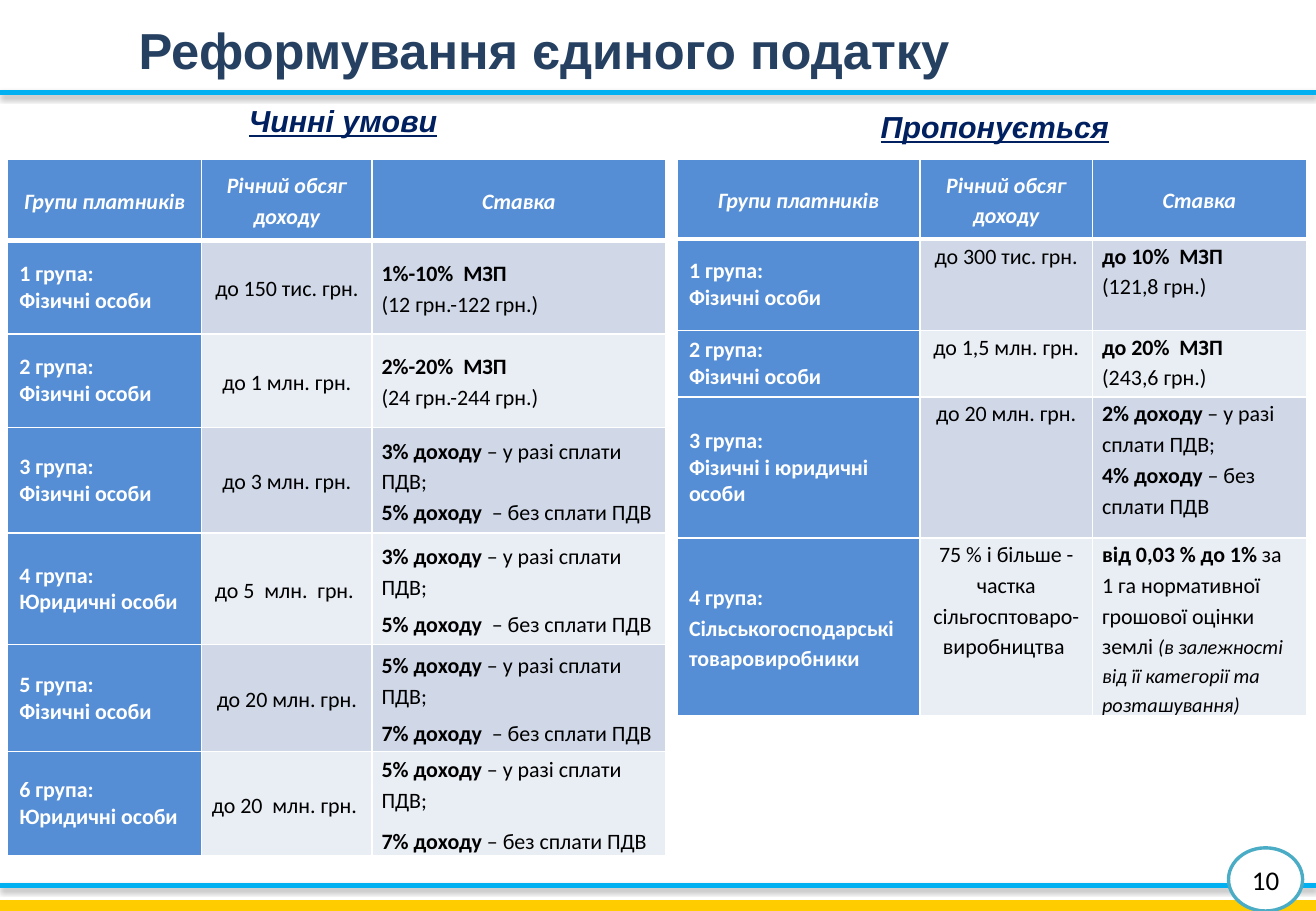
from lxml import etree
from pptx import Presentation
from pptx.dml.color import RGBColor
from pptx.enum.shapes import MSO_CONNECTOR, MSO_SHAPE
from pptx.enum.text import MSO_ANCHOR, PP_ALIGN
from pptx.util import Inches, Pt

LEFT, CENTER = PP_ALIGN.LEFT, PP_ALIGN.CENTER
TOP, MIDDLE = MSO_ANCHOR.TOP, MSO_ANCHOR.MIDDLE
STRAIGHT = MSO_CONNECTOR.STRAIGHT
RECTANGLE, OVAL = MSO_SHAPE.RECTANGLE, MSO_SHAPE.OVAL
NS = "http://schemas.openxmlformats.org/drawingml/2006/main"
COLORS = {
    "title": "254061", "heading": "002060", "rule": "00B0F0", "band": "FFCC00",
    "label": "558ED5", "odd": "D0D8E8", "even": "E9EDF4", "badge": "4BACC6",
    "white": "FFFFFF", "black": "000000",
}
WIDTH, HEIGHT = 10.83, 7.5


def rgb(name):
    return RGBColor.from_string(COLORS[name])


def style(para, size, color, bold=False, italic=False, face="Calibri", align=LEFT):
    para.alignment = align
    font = para.font
    font.name, font.size, font.bold, font.italic = face, Pt(size), bold, italic
    font.color.rgb = rgb(color)


deck = Presentation()
deck.slide_width, deck.slide_height = Inches(WIDTH), Inches(HEIGHT)
page = deck.slides.add_slide(deck.slide_layouts[5])
shapes = page.shapes

title = shapes.title
title.left, title.top, title.width, title.height = (
    Inches(v) for v in (1.04, 0.05, 9.73, 0.71))
title.text_frame.text = "Реформування єдиного податку"
title.text_frame.vertical_anchor = MIDDLE
style(title.text_frame.paragraphs[0], 30, "title", bold=True, face="Arial")

for y in (0.76, 7.29):
    rule = shapes.add_connector(STRAIGHT, 0, Inches(y), Inches(WIDTH), Inches(y))
    rule.line.color.rgb = rgb("rule")
    rule.line.width = Pt(3)
    rule._element.spPr.append(etree.fromstring(
        f'<a:effectLst xmlns:a="{NS}"><a:outerShdw blurRad="{Pt(3.1)}" dist="{Pt(1.8)}" '
        f'dir="5400000" rotWithShape="0"><a:srgbClr val="{COLORS["black"]}">'
        '<a:alpha val="35000"/></a:srgbClr></a:outerShdw></a:effectLst>'))

band = shapes.add_shape(RECTANGLE, 0, Inches(7.41), Inches(WIDTH), Inches(HEIGHT - 7.41))
band.shadow.inherit = False
band.fill.solid()
band.fill.fore_color.rgb = rgb("band")
band.line.fill.background()

HEADER = ("Групи платників", "Річний обсяг доходу", ["Ставка"])
current_rows = [
    HEADER,
    ("1 група: \vФізичні особи", "до 150 тис. грн.", ["1%-10%  МЗП", "|(12 грн.-122 грн.)"]),
    ("2 група: \vФізичні особи", "до 1 млн. грн.", ["2%-20%  МЗП", "|(24 грн.-244 грн.)"]),
    ("3 група: \vФізичні особи", "до 3 млн. грн.",
     ["3% доходу| – у разі сплати ПДВ;", "5% доходу|  – без сплати ПДВ"]),
    ("4 група: \vЮридичні особи", "до 5  млн.  грн. ",
     ["3% доходу |– у разі сплати ПДВ;", "5% доходу  |– без сплати ПДВ"]),
    ("5 група: \vФізичні особи", "до 20 млн. грн.",
     ["5% доходу |– у разі сплати ПДВ;", "7% доходу  |– без сплати ПДВ"]),
    ("6 група: \vЮридичні особи", "до 20  млн. грн. ",
     ["5% доходу |– у разі сплати ПДВ;", "7% доходу| – без сплати ПДВ"]),
]
proposed_rows = [
    HEADER,
    ("1 група: \vФізичні особи", "до 300 тис. грн.", ["до 10%  МЗП", "|(121,8 грн.)"]),
    ("2 група: \vФізичні особи", "до 1,5 млн. грн.", ["до 20%  МЗП", "|(243,6 грн.)"]),
    ("3 група: \vФізичні і юридичні особи", "до 20 млн. грн.",
     ["2% доходу |– у разі сплати ПДВ;", "4% доходу| – без сплати ПДВ"]),
    ("4 група: Сільськогосподарські товаровиробники",
     "75 % і більше - частка сільгосптоваро- виробництва ",
     ["від 0,03 % до 1% |за 1 га нормативної грошової оцінки землі "
      "|(в залежності від її категорії та розташування)"]),
]
panels = [
    ("Чинні умови", (1.95, 0.79, 1.76), 0.06, (1.6, 1.4, 2.42),
     (0.67, 0.77, 0.77, 0.87, 0.92, 0.88, 0.86), current_rows, MIDDLE,
     {4: (6, 1), 5: (6, 1), 6: (6, 1.15)}),
    ("Пропонується", (7.15, 0.84, 2.1), 5.57, (2, 1.42, 1.76),
     (0.66, 0.75, 0.55, 1.16, 1.46), proposed_rows, TOP, {}),
]

for name, (x, y, width), left, columns, heights, rows, anchor, spacing in panels:
    heading = shapes.add_textbox(Inches(x), Inches(y), Inches(width), Inches(0.4))
    heading.text_frame.word_wrap = False
    heading.text_frame.text = name
    para = heading.text_frame.paragraphs[0]
    style(para, 18, "heading", bold=True, italic=True, face="Arial")
    para.font.underline = True

    table = shapes.add_table(len(rows), len(columns), Inches(left), Inches(1.31),
                             Inches(sum(columns)), Inches(sum(heights))).table
    for column, width in zip(table.columns, columns):
        column.width = Inches(width)
    for r, (row, height) in enumerate(zip(rows, heights)):
        table.rows[r].height = Inches(height)
        for c, content in enumerate(row):
            cell = table.cell(r, c)
            label = r > 0 and c == 0
            body = r > 0 and c > 0
            cell.vertical_anchor = anchor if body else MIDDLE
            cell.margin_left = cell.margin_right = Inches(0.1 if label else 0.08)
            cell.margin_top = cell.margin_bottom = Inches(0.05 if label else 0)
            for side in "LRTB":
                thick = (r, side) in ((0, "B"), (1, "T"))
                cell._tc.get_or_add_tcPr().append(etree.fromstring(
                    f'<a:ln{side} xmlns:a="{NS}" w="{Pt(3 if thick else 1)}"><a:solidFill>'
                    f'<a:srgbClr val="{COLORS["white"]}"/></a:solidFill></a:ln{side}>'))
            cell.fill.solid()
            fill = ("odd" if r % 2 else "even") if body else "label"
            cell.fill.fore_color.rgb = rgb(fill)

            frame = cell.text_frame
            lines = content if c == 2 else [content]
            for i, line in enumerate(lines):
                para = frame.add_paragraph() if i else frame.paragraphs[0]
                align = CENTER if r == 0 or c == 1 else LEFT
                style(para, 13, "black" if body else "white", bold=not body,
                      italic=r == 0, align=align)
                para.line_spacing = 1.0 if "\v" in line else 1.15
                if i and r in spacing:
                    gap, para.line_spacing = spacing[r]
                    para.space_before = Pt(gap)
                if not (body and c == 2):
                    para.text = line
                    continue
                for part, text in enumerate(line.split("|")):
                    if text:
                        span = para.add_run()
                        span.text = text
                        span.font.bold = part == 0
                        if part == 2:
                            span.font.size = Pt(12)
                            span.font.italic = True

badge = shapes.add_shape(OVAL, Inches(10.11), Inches(6.98), Inches(0.61), Inches(0.52))
badge.shadow.inherit = False
badge.fill.solid()
badge.fill.fore_color.rgb = rgb("white")
badge.line.color.rgb = rgb("badge")
badge.line.width = Pt(2)
frame = badge.text_frame
frame.word_wrap = False
frame.vertical_anchor = MIDDLE
frame.text = "10"
style(frame.paragraphs[0], 16, "black", align=CENTER)

deck.save("out.pptx")
